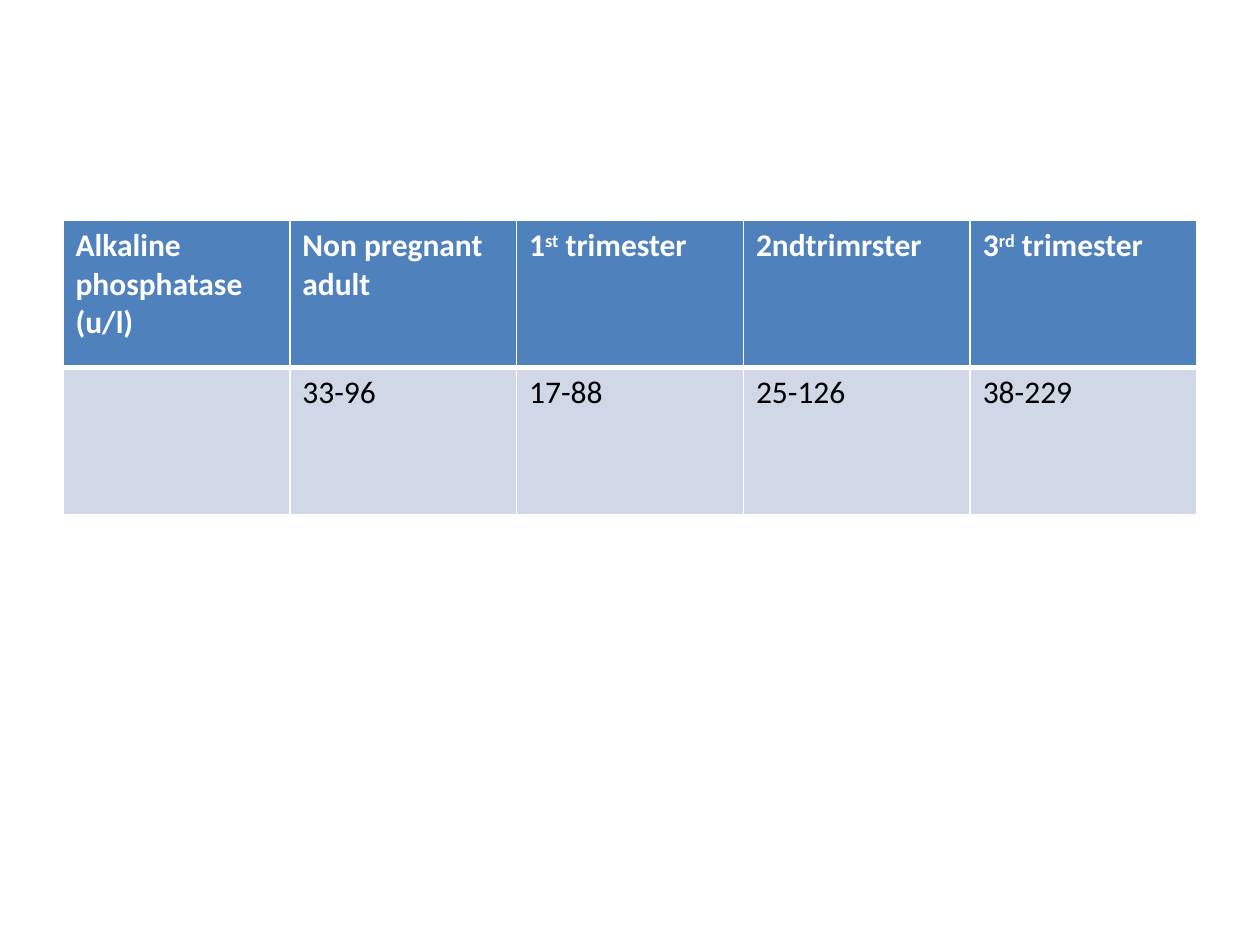
from lxml.etree import SubElement
from pptx import Presentation
from pptx.dml.color import RGBColor as RGB
from pptx.oxml.ns import qn
from pptx.util import Inches, Pt

COLORS = {"head": "4F81BD", "body": "D0D8E8", "white": "FFFFFF", "black": "000000"}
COL, ROW = Inches(0.5), Inches(0.25)  # 20 columns by 30 rows

HEAD = [
    ["Alkaline phosphatase (u/l)"],
    ["Non pregnant adult"],
    ["1", "st", " trimester"],
    ["2ndtrimrster"],
    ["3", "rd", " trimester"],
]
RANGES = [[], ["33-96"], ["17-88"], ["25-126"], ["38-229"]]


class Deck:
    def __init__(self, font, size):
        self.font, self.size = font, Pt(size)
        self.prs = Presentation()
        self.prs.slide_width, self.prs.slide_height = 20 * COL, 30 * ROW
        self.slide = self.prs.slides.add_slide(self.prs.slide_layouts[6])

    def table(self, left, top, width, height, rows):
        """Place a table whose first row is the header; lengths in grid units."""
        grid = self.slide.shapes.add_table(
            len(rows), len(rows[0]), int(left * COL), int(top * ROW),
            int(width * COL), int(height * ROW)).table
        for r, row in enumerate(rows):
            for c, parts in enumerate(row):
                self.cell(grid.cell(r, c), parts, r == 0)

    def cell(self, cell, parts, head):
        self.edges(cell, {"L": 1, "R": 1, "T": 1 if head else 3, "B": 3 if head else 1})
        cell.fill.solid()
        cell.fill.fore_color.rgb = RGB.from_string(COLORS["head" if head else "body"])
        para = cell.text_frame.paragraphs[0]
        font = para.font
        font.name, font.size, font.bold = self.font, self.size, head
        font.color.rgb = RGB.from_string(COLORS["white" if head else "black"])
        for i, part in enumerate(parts):
            run = para.add_run()
            run.text = part
            if i == 1:  # ordinal ending, raised
                run.font._element.set("baseline", "30000")

    def edges(self, cell, widths):
        props = cell._tc.get_or_add_tcPr()
        for side, width in widths.items():
            line = SubElement(props, qn(f"a:ln{side}"), w=str(Pt(width)))
            fill = SubElement(line, qn("a:solidFill"))
            SubElement(fill, qn("a:srgbClr"), val=COLORS["white"])


def main():
    deck = Deck("Calibri", 18)
    deck.table(1, 7, 18, 9.33, [HEAD, RANGES])
    deck.prs.save("out.pptx")


if __name__ == "__main__":
    main()
